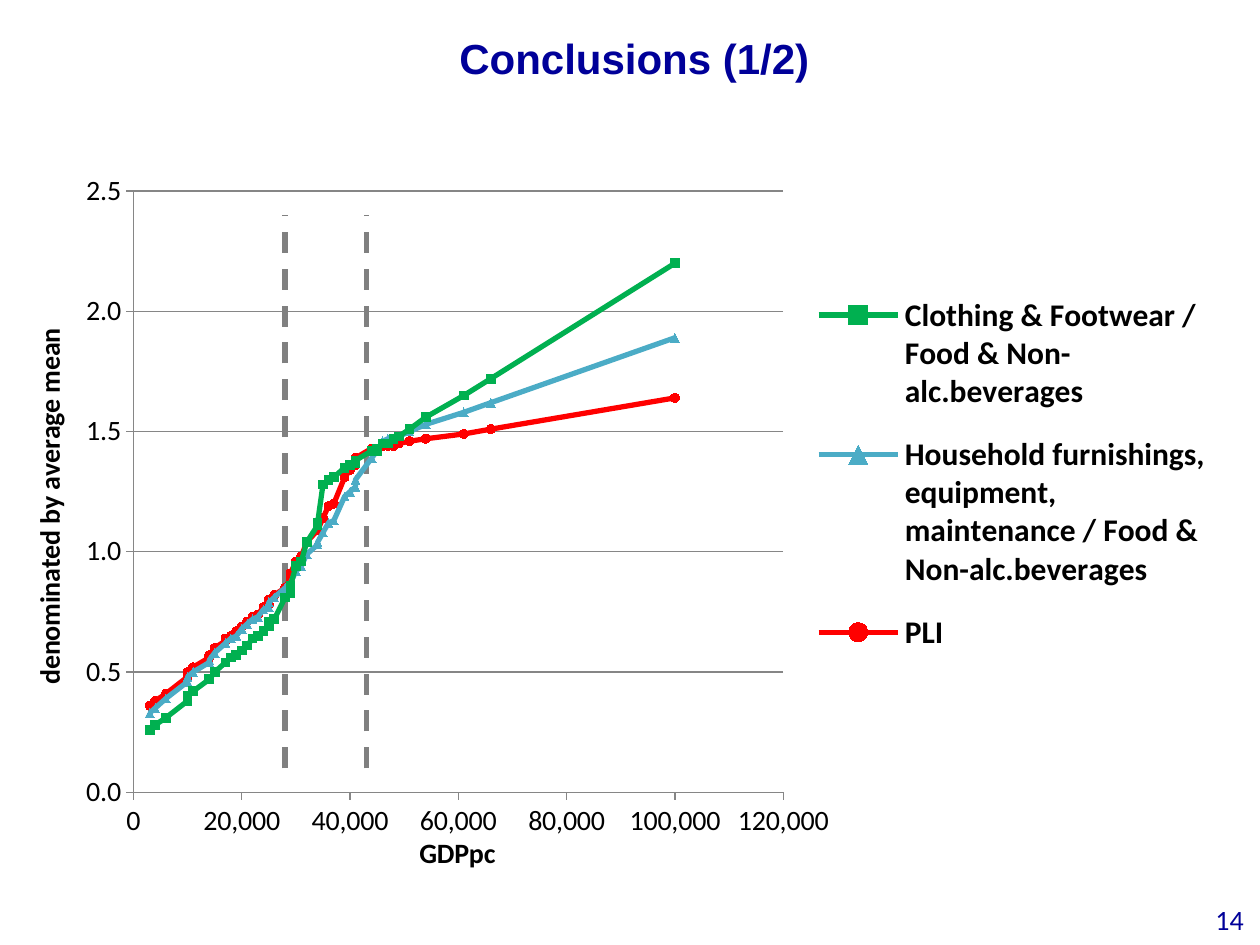
from pptx import Presentation
from pptx.chart.data import XyChartData
from pptx.dml.color import RGBColor
from pptx.enum.chart import XL_CHART_TYPE, XL_LEGEND_POSITION, XL_MARKER_STYLE, XL_TICK_MARK
from pptx.enum.dml import MSO_LINE
from pptx.enum.text import MSO_ANCHOR, PP_ALIGN
from pptx.oxml import parse_xml
from pptx.oxml.ns import nsdecls, qn
from pptx.util import Inches, Pt

NAVY, GREY = "000099", "868686"

GDP = [3, 4, 6, 10, 10, 11, 14, 14, 15, 17, 17, 18, 19, 20, 21, 22, 23, 24,
       25, 25, 25, 25, 26, 28, 29, 29, 29, 30, 31, 32, 32, 34, 34, 35, 36, 37,
       39, 40, 41, 41, 44, 45, 45, 46, 46, 47, 48, 49, 49, 51, 54, 61, 66, 100]

CLOTHING = [
    0.26, 0.28, 0.31, 0.38, 0.4, 0.42, 0.47, 0.47, 0.5, 0.54, 0.54, 0.56, 0.57, 0.59,
    0.61, 0.64, 0.65, 0.67, 0.69, 0.71, 0.71, 0.71, 0.72, 0.81, 0.83, 0.85, 0.86, 0.94,
    0.96, 1.04, 1.04, 1.11, 1.12, 1.28, 1.3, 1.31, 1.35, 1.36, 1.37, 1.38, 1.42, 1.42,
    1.43, 1.45, 1.45, 1.45, 1.47, 1.48, 1.48, 1.51, 1.56, 1.65, 1.72, 2.2]

HOUSEHOLD = [
    0.33, 0.35, 0.39, 0.46, 0.48, 0.5, 0.54, 0.55, 0.58, 0.62, 0.62, 0.64, 0.65, 0.68,
    0.7, 0.72, 0.73, 0.76, 0.77, 0.79, 0.79, 0.79, 0.81, 0.85, 0.86, 0.87, 0.87, 0.92,
    0.94, 0.99, 0.99, 1.03, 1.04, 1.08, 1.12, 1.13, 1.23, 1.25, 1.27, 1.3, 1.39, 1.42,
    1.42, 1.46, 1.46, 1.47, 1.47, 1.48, 1.48, 1.5, 1.53, 1.58, 1.62, 1.89]

PLI = [
    0.36, 0.38, 0.41, 0.48, 0.5, 0.52, 0.56, 0.57, 0.6, 0.63, 0.64, 0.65, 0.67, 0.69,
    0.71, 0.73, 0.74, 0.77, 0.78, 0.8, 0.8, 0.8, 0.82, 0.85, 0.89, 0.9, 0.91, 0.96,
    0.98, 1.04, 1.04, 1.09, 1.09, 1.14, 1.19, 1.2, 1.31, 1.34, 1.36, 1.39, 1.43, 1.43,
    1.43, 1.44, 1.44, 1.44, 1.44, 1.45, 1.45, 1.46, 1.47, 1.49, 1.51, 1.64]

CURVES = [
    ("Clothing & Footwear / Food & Non-alc.beverages", CLOTHING, "00B050", XL_MARKER_STYLE.SQUARE),
    ("Household furnishings, equipment, maintenance / Food & Non-alc.beverages",
     HOUSEHOLD, "4BACC6", XL_MARKER_STYLE.TRIANGLE),
    ("PLI", PLI, "FF0000", XL_MARKER_STYLE.CIRCLE),
]
THRESHOLDS = [("Series 4", 28000), ("Series 5", 43000)]


def rgb(color):
    return RGBColor.from_string(color)


def set_font(font, name, size, color, bold=False):
    font.name = name
    font.size = Pt(size)
    font.bold = bold
    font.color.rgb = rgb(color)


def place(shape, left, top, width, height):
    shape.left, shape.top = Inches(left), Inches(top)
    shape.width, shape.height = Inches(width), Inches(height)


def add_title(s, text):
    title = s.shapes.title
    place(title, 0.9, 0.21, 8.27, 0.5)
    tf = title.text_frame
    tf.vertical_anchor = MSO_ANCHOR.MIDDLE
    p = tf.paragraphs[0]
    p.alignment = PP_ALIGN.CENTER
    r = p.add_run()
    r.text = text
    set_font(r.font, "Arial", 24, NAVY, True)


def add_page_number(s, text):
    tf = s.shapes.add_textbox(Inches(9.53), Inches(7.22), Inches(0.44), Inches(0.16)).text_frame
    tf.vertical_anchor = MSO_ANCHOR.MIDDLE
    p = tf.paragraphs[0]
    p.alignment = PP_ALIGN.RIGHT
    r = p.add_run()
    r.text = text
    set_font(r.font, "Calibri", 16, NAVY)


def manual_layout(x, y, w, h, inner=False):
    target = '<c:layoutTarget val="inner"/>' if inner else ""
    return parse_xml(
        f'<c:layout {nsdecls("c")}><c:manualLayout>{target}'
        '<c:xMode val="edge"/><c:yMode val="edge"/>'
        f'<c:x val="{x}"/><c:y val="{y}"/><c:w val="{w}"/><c:h val="{h}"/>'
        '</c:manualLayout></c:layout>')


def drop_layout(element):
    for layout in element.findall(qn("c:layout")):
        element.remove(layout)


def format_axis(axis, title, maximum, major, number_format):
    axis.minimum_scale, axis.maximum_scale, axis.major_unit = 0, maximum, major
    axis.major_tick_mark = XL_TICK_MARK.OUTSIDE
    axis.minor_tick_mark = XL_TICK_MARK.NONE
    axis.format.line.color.rgb = rgb(GREY)
    axis.tick_labels.number_format = number_format
    axis.tick_labels.number_format_is_linked = False
    set_font(axis.tick_labels.font, "Calibri", 16, "000000")
    r = axis.axis_title.text_frame.paragraphs[0].add_run()
    r.text = title
    set_font(r.font, "Calibri", 16, "000000", True)


def format_line(series, color):
    series.smooth = False
    series.format.line.color.rgb = rgb(color)
    series.format.line.width = Pt(3)


def format_curve(series, color, style):
    format_line(series, color)
    marker = series.marker
    marker.style, marker.size = style, 5
    marker.format.fill.solid()
    marker.format.fill.fore_color.rgb = rgb(color)
    marker.format.line.fill.background()


def format_threshold(series):
    format_line(series, "808080")
    series.format.line.dash_style = MSO_LINE.DASH
    series.marker.style = XL_MARKER_STYLE.NONE


def format_legend(chart):
    chart.has_legend = True
    legend = chart.legend
    legend.position = XL_LEGEND_POSITION.RIGHT
    legend.include_in_layout = False
    set_font(legend.font, "Calibri", 18, "000000", True)
    element = legend._element
    drop_layout(element)
    previous = element.find(qn("c:legendPos"))
    hidden = [parse_xml(f'<c:legendEntry {nsdecls("c")}><c:idx val="{i}"/>'
                        '<c:delete val="1"/></c:legendEntry>')
              for i in range(len(CURVES), len(CURVES) + len(THRESHOLDS))]
    for child in hidden + [manual_layout(0.65, 0.16, 0.34, 0.56)]:
        previous.addnext(child)
        previous = child


def add_ratio_chart(s):
    data = XyChartData()
    for name, values, _, _ in CURVES:
        series = data.add_series(name)
        for x, y in zip(GDP, values):
            series.add_data_point(x * 1000, y)
    for name, x in THRESHOLDS:
        series = data.add_series(name)
        for step in range(1, 25):
            series.add_data_point(x, step / 10)
    chart = s.shapes.add_chart(XL_CHART_TYPE.XY_SCATTER_LINES, Inches(0.2), Inches(1.23),
                               Inches(9.55), Inches(5.75), data).chart
    chart.has_title = False
    set_font(chart.font, "Calibri", 10, "000000")
    plot = chart.plots[0]
    plot.vary_by_categories = False
    lines = list(plot.series)
    for series, (_, _, color, style) in zip(lines, CURVES):
        format_curve(series, color, style)
    for series in lines[len(CURVES):]:
        format_threshold(series)
    format_axis(chart.category_axis, "GDPpc", 120000, 20000, "#,##0")
    format_axis(chart.value_axis, "denominated by average mean", 2.5, 0.5, "0.0")
    chart.category_axis.has_major_gridlines = False
    chart.value_axis.has_major_gridlines = True
    chart.value_axis.major_gridlines.format.line.color.rgb = rgb(GREY)
    format_legend(chart)
    area = chart._chartSpace.chart.plotArea
    drop_layout(area)
    area.insert(0, manual_layout(0.09, 0.05, 0.54, 0.83, True))


def main():
    prs = Presentation()
    prs.slide_width, prs.slide_height = Inches(10), Inches(7.5)
    s = prs.slides.add_slide(prs.slide_layouts[5])
    add_title(s, "Conclusions (1/2)")
    add_ratio_chart(s)
    add_page_number(s, "14")
    prs.save("out.pptx")


if __name__ == "__main__":
    main()
